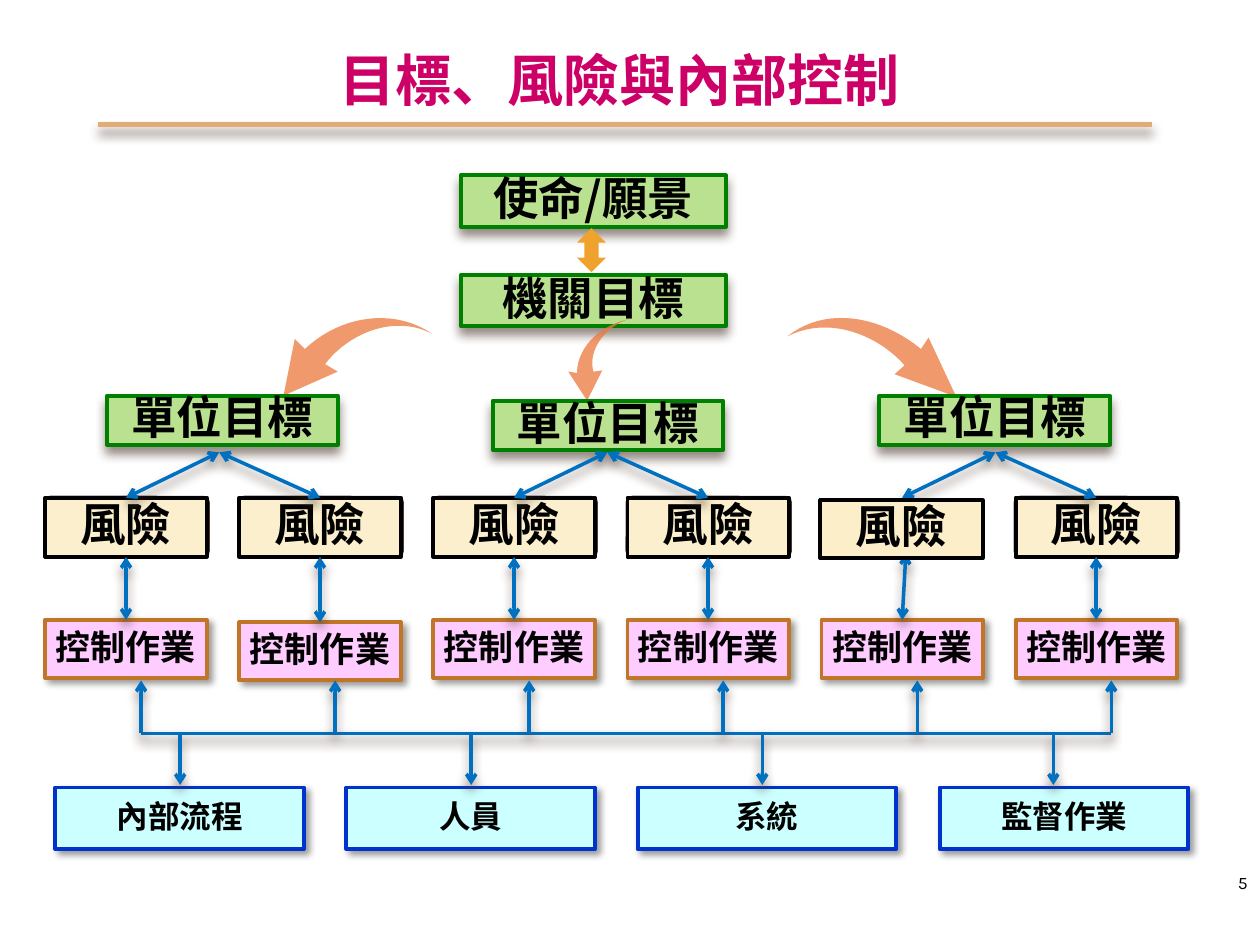
from dataclasses import dataclass
from typing import Optional

from lxml.etree import SubElement
from pptx import Presentation
from pptx.dml.color import RGBColor
from pptx.enum.shapes import MSO_CONNECTOR as Link, MSO_SHAPE as Preset
from pptx.enum.text import MSO_ANCHOR as Anchor, PP_ALIGN as Align
from pptx.oxml.ns import qn
from pptx.util import Inches, Pt

CJK, LATIN = "Noto Sans CJK SC", "Karla"
BLUE = "0070C0"
COLUMN, FIRST_LEFT, FIRST_CENTER = 1.54, 0.36, 1.0
RISK_TOP, CONTROL_TOP, BUS_Y, PROCESS_TOP = 3.95, 4.92, 5.82, 6.25

Point = tuple[float, float]


@dataclass(frozen=True)
class Shadow:
    color: str
    opacity: int
    blur: float
    distance: float
    angle: int


BELOW = Shadow("4E3B30", 60, 6, 4, 90)
CORNER = Shadow("000000", 40, 4, 3, 45)


@dataclass(frozen=True)
class BoxStyle:
    fill: Optional[str]
    line: str
    size: int = 26
    shadow: Optional[Shadow] = None


GOAL = BoxStyle("BAE18F", "008000", shadow=BELOW)
RISK = BoxStyle(None, "000000")
FILLED_RISK = BoxStyle("FBEEC9", "000000")
CONTROL = BoxStyle("FFCCFF", "C17529", 20, CORNER)
PROCESS = BoxStyle("CCFFFF", "0033CC", 18, CORNER)


@dataclass(frozen=True)
class Swoosh:
    """Curved arrow: two Bezier edges from the tail, joined by a head."""
    tail: Point
    outer: tuple[Point, Point]
    head: tuple[Point, ...]
    inner: tuple[Point, Point]


SWOOSHES = (
    Swoosh((6.25, 2.67), ((6.55, 2.43), (6.98, 2.5)),
           ((7.31, 2.77), (7.37, 2.68), (7.59, 3.15), (7.1, 2.97), (7.18, 2.9)),
           ((6.97, 2.66), (6.58, 2.5))),
    Swoosh((3.43, 2.65), ((3.14, 2.45), (2.72, 2.49)),
           ((2.42, 2.77), (2.34, 2.69), (2.25, 3.14), (2.68, 2.95), (2.58, 2.89)),
           ((2.76, 2.65), (3.13, 2.49))),
    Swoosh((5.0, 2.53), ((4.73, 2.59), (4.58, 2.78)),
           ((4.58, 2.96), (4.51, 2.95), (4.66, 3.18), (4.78, 2.94), (4.71, 2.95)),
           ((4.66, 2.77), (4.82, 2.58))),
)

prs = Presentation()
prs.slide_width, prs.slide_height = Inches(10), Inches(7.5)
slide = prs.slides.add_slide(prs.slide_layouts[6])
shapes = slide.shapes


def paint(target, color: str, opacity: int = 100) -> None:
    target.solid()
    target.fore_color.rgb = RGBColor.from_string(color)
    if opacity < 100:
        srgb = target._xPr.find(f".//{qn('a:srgbClr')}")
        SubElement(srgb, qn("a:alpha"), val=str(opacity * 1000))


def cast(effects, shadow: Shadow) -> None:
    outer = SubElement(effects, qn("a:outerShdw"), blurRad=str(Pt(shadow.blur)),
                       dist=str(Pt(shadow.distance)), dir=str(shadow.angle * 60000),
                       algn="ctr", rotWithShape="0")
    color = SubElement(outer, qn("a:srgbClr"), val=shadow.color)
    SubElement(color, qn("a:alpha"), val=str(shadow.opacity * 1000))


def write(shape, text: str, *, size: int, color: str = "000000", font: str = CJK,
          bold: bool = True, align=Align.CENTER, anchor=Anchor.MIDDLE,
          inset: Optional[float] = None, tight: bool = False) -> None:
    frame = shape.text_frame
    frame.word_wrap = True
    frame.vertical_anchor = anchor
    if inset is not None:
        frame.margin_left = frame.margin_right = Inches(inset)
        frame.margin_top = frame.margin_bottom = Inches(inset)
    paragraph = frame.paragraphs[0]
    paragraph.alignment = align
    if tight:
        paragraph.line_spacing = 0.9
        after = SubElement(paragraph._p.get_or_add_pPr(), qn("a:spcAft"))
        SubElement(after, qn("a:spcPct"), val="35000")
    run = paragraph.add_run()
    run.text = text
    run.font.name, run.font.size, run.font.bold = font, Pt(size), bold
    run.font.color.rgb = RGBColor.from_string(color)
    SubElement(run._r.get_or_add_rPr(), qn("a:ea"), typeface=font)


def preset(kind, left: float, top: float, width: float, height: float,
           fill: Optional[str], line: Optional[str] = None, weight: float = 2.25,
           opacity: int = 100):
    shape = shapes.add_shape(kind, *map(Inches, (left, top, width, height)))
    shape.shadow.inherit = False
    if fill:
        paint(shape.fill, fill, opacity)
    else:
        shape.fill.background()
    if line:
        paint(shape.line.fill, line)
        shape.line.width = Pt(weight)
    else:
        shape.line.fill.background()
    return shape


def box(text: str, left: float, top: float, width: float, height: float,
        style: BoxStyle) -> None:
    shape = preset(Preset.RECTANGLE, left, top, width, height, style.fill, style.line)
    if style.shadow:
        cast(shape._element.spPr.find(qn("a:effectLst")), style.shadow)
    write(shape, text, size=style.size, inset=0.07, tight=True)


def link(start: Point, end: Point, color: str = BLUE, weight: float = 2,
         head: bool = False, tail: bool = False) -> None:
    line = shapes.add_connector(Link.STRAIGHT, *map(Inches, start + end))
    paint(line.line.fill, color)
    line.line.width = Pt(weight)
    for tag, wanted in (("a:headEnd", head), ("a:tailEnd", tail)):
        if wanted:
            SubElement(line.line._get_or_add_ln(), qn(tag), type="arrow")
    cast(SubElement(line._element.spPr, qn("a:effectLst")), BELOW)


def bezier(a: Point, b: Point, c: Point, d: Point, steps: int = 20) -> list[Point]:
    def at(t: float, axis: int) -> float:
        u = 1 - t
        return (u**3 * a[axis] + 3 * u * u * t * b[axis]
                + 3 * u * t * t * c[axis] + t**3 * d[axis])
    return [(at(i / steps, 0), at(i / steps, 1)) for i in range(steps + 1)]


def draw_swoosh(arrow: Swoosh) -> None:
    outline = (bezier(arrow.tail, *arrow.outer, arrow.head[0]) + list(arrow.head[1:])
               + bezier(arrow.head[-1], *arrow.inner, arrow.tail)[1:])
    corners = [(Inches(x), Inches(y)) for x, y in outline]
    builder = shapes.build_freeform(*corners[0])
    builder.add_line_segments(corners[1:], close=True)
    shape = builder.convert_to_shape()
    shape.shadow.inherit = False
    paint(shape.fill, "EC773C", 75)
    shape.line.fill.background()


# Title and its rule
link((0.78, 0.99), (9.14, 0.99), "E2AC76", 3)
write(shapes.add_textbox(*map(Inches, (0.42, 0, 9, 1.25))), "目標、風險與內部控制",
      size=32, color="CC0066")

# Mission and agency goal
box("機關目標", 3.66, 2.18, 2.1, 0.41, GOAL)
box("使命/願景", 3.66, 1.39, 2.1, 0.41, GOAL)
preset(Preset.UP_DOWN_ARROW, 4.58, 1.81, 0.23, 0.35, "F0A22E")
for swoosh in SWOOSHES:
    draw_swoosh(swoosh)

# Unit goals
for left, top in ((0.85, 3.14), (3.91, 3.18), (6.98, 3.14)):
    box("單位目標", left, top, 1.83, 0.39, GOAL)

# Control activities, and links from goal to risk to control
SHIFTED_CONTROL, SHIFTED_RISK = 1, 4
for i in range(6):
    left, center = FIRST_LEFT + i * COLUMN, FIRST_CENTER + i * COLUMN
    control_top = CONTROL_TOP + (0.02 if i == SHIFTED_CONTROL else 0)
    if i != SHIFTED_RISK:
        card = preset(Preset.ROUNDED_RECTANGLE, left - 0.01, RISK_TOP - 0.01, 1.31, 0.48,
                      "FBEEC9", "4E3B30", 0.79, 90)
        card.adjustments[0] = 0.1
        box("風險", left, RISK_TOP, 1.28, 0.47, RISK)
    box("控制作業", left, control_top, 1.28, 0.46, CONTROL)
    apex = 1.74 + i // 2 * 2 * COLUMN
    risk_end = (7.19, 4.39) if i == SHIFTED_RISK else (center, 4.42)
    link((center, RISK_TOP), (apex, 3.59), head=True, tail=True)
    link((center, control_top), risk_end, head=True, tail=True)
box("風險", 6.51, 3.97, 1.29, 0.46, FILLED_RISK)

# Bus line with its risers
link((1.12, BUS_Y), (8.82, BUS_Y))
for i in range(6):
    x = 1.12 + i * COLUMN
    link((x, BUS_Y), (x, 5.4), tail=True)

# Foundations, each fed from the bus
for i, (text, left, width) in enumerate((("內部流程", 0.44, 1.97), ("人員", 2.75, 1.97),
                                         ("系統", 5.06, 2.05), ("監督作業", 7.46, 1.97))):
    box(text, left, PROCESS_TOP, width, 0.49, PROCESS)
    x = 1.43 + i * 1.5 * COLUMN
    link((x, BUS_Y), (x, 6.23), tail=True)

# Page number
write(shapes.add_textbox(*map(Inches, (7.67, 6.87, 2.33, 0.5))), "5", size=10,
      font=LATIN, bold=False, align=Align.RIGHT, anchor=Anchor.TOP)

prs.save("out.pptx")
